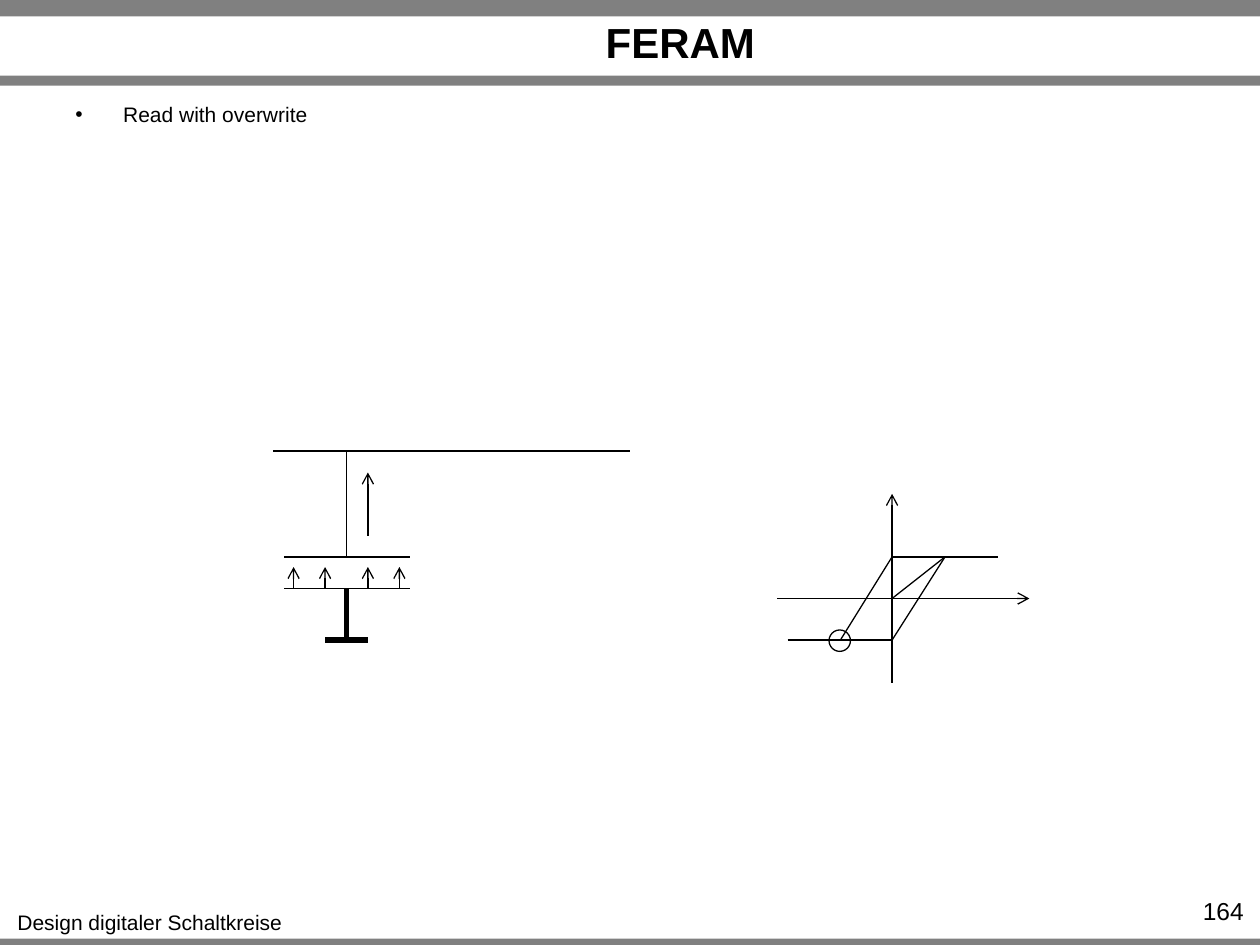
import itertools
from dataclasses import dataclass

import pptx
import pptx.dml.color
import pptx.enum.shapes
import pptx.enum.text
import pptx.oxml
import pptx.oxml.ns
import pptx.util
from pptx.util import Inches

ALIGN = pptx.enum.text.PP_ALIGN
ANCHOR = pptx.enum.text.MSO_ANCHOR
SHAPE = pptx.enum.shapes.MSO_SHAPE


@dataclass(frozen=True)
class Theme:
    font: str = "Arial"
    ink: str = "000000"
    bar: str = "808080"
    title_size: int = 24
    body_size: int = 12
    number_size: int = 14
    thin: float = 0.75
    thick: float = 3


THEME = Theme()


def color(value):
    return pptx.dml.color.RGBColor.from_string(value)


def add_drawing_element(parent, tag, **attributes):
    element = pptx.oxml.parse_xml(f"<a:{tag} {pptx.oxml.ns.nsdecls('a')}/>")
    for name, value in attributes.items():
        element.set(name, value)
    parent.append(element)


def add_bar(slide, top, height):
    bar = slide.shapes.add_shape(
        SHAPE.RECTANGLE, 0, Inches(top), Inches(10), Inches(height))
    bar.shadow.inherit = False
    bar.fill.solid()
    bar.fill.fore_color.rgb = color(THEME.bar)
    bar.line.fill.background()


def add_text(slide, text, box, size, align=ALIGN.LEFT, anchor=ANCHOR.TOP,
             bold=False, wrap=True, bullet=False):
    label = slide.shapes.add_textbox(*map(Inches, box))
    frame = label.text_frame
    frame.word_wrap = wrap
    frame.vertical_anchor = anchor
    frame.text = text
    paragraph = frame.paragraphs[0]
    paragraph.alignment = align
    if bullet:
        properties = paragraph._p.get_or_add_pPr()
        indent = Inches(0.38)
        properties.set("marL", str(indent))
        properties.set("indent", str(-indent))
        add_drawing_element(properties, "buFont", typeface=THEME.font)
        add_drawing_element(properties, "buChar", char="•")
    for run in paragraph.runs:
        run.font.name = THEME.font
        run.font.size = pptx.util.Pt(size)
        run.font.bold = bold
        run.font.color.rgb = color(THEME.ink)


def add_line(slide, start, end, width=THEME.thin, arrow=False):
    line = slide.shapes.add_connector(
        pptx.enum.shapes.MSO_CONNECTOR.STRAIGHT, *map(Inches, (*start, *end)))
    line.line.color.rgb = color(THEME.ink)
    line.line.width = pptx.util.Pt(width)
    if arrow:
        add_drawing_element(line.line._get_or_add_ln(), "tailEnd", type="arrow")
    add_drawing_element(line._element.spPr, "effectLst")


def add_capacitor(slide):
    center, upper, lower, ground, bit_line = 2.75, 4.42, 4.67, 5.08, 3.58

    # Two plates, each drawn as a left and a right half
    for plate, side in itertools.product((upper, lower), (-0.5, 0.5)):
        add_line(slide, (center, plate), (center + side, plate))

    # Ground connection
    add_line(slide, (center, lower), (center, ground), THEME.thick)
    add_line(slide, (2.58, ground), (2.92, ground), THEME.thick)

    # Polarisation between the plates
    for x in (2.33, 2.58, 2.92, 3.17):
        add_line(slide, (x, lower), (x, 4.5), arrow=True)

    # Bit line, its stem and the charge flowing to it
    add_line(slide, (2.17, bit_line), (5, bit_line))
    for low, high in itertools.pairwise((upper, 4, 3.75, bit_line)):
        add_line(slide, (center, low), (center, high))
    add_line(slide, (2.92, 4.25), (2.92, 3.75), arrow=True)


def add_hysteresis(slide):
    origin_x, origin_y, top, bottom = 7.08, 4.75, 4.42, 5.08
    left, right = 6.67, 7.5

    # Axes
    add_line(slide, (6.17, origin_y), (8.17, origin_y), arrow=True)
    add_line(slide, (origin_x, 5.42), (origin_x, 3.92), arrow=True)

    # Loop, saturation levels and initial curve
    add_line(slide, (origin_x, bottom), (right, top))
    add_line(slide, (left, bottom), (origin_x, top))
    add_line(slide, (origin_x, top), (7.92, top))
    add_line(slide, (6.25, bottom), (origin_x, bottom))
    add_line(slide, (origin_x, origin_y), (right, top))

    # Operating point
    point = slide.shapes.add_shape(
        SHAPE.OVAL, *map(Inches, (6.58, 5, 0.17, 0.17)))
    point.shadow.inherit = False
    point.fill.background()
    point.line.color.rgb = color(THEME.ink)
    point.line.width = pptx.util.Pt(THEME.thin)


def main():
    deck = pptx.Presentation()
    deck.slide_width, deck.slide_height = Inches(10), Inches(7.5)
    slide = deck.slides.add_slide(deck.slide_layouts[6])

    # Frame
    for top, height in ((7.45, 0.08), (0, 0.13), (0.6, 0.08)):
        add_bar(slide, top, height)
    add_text(slide, "Design digitaler Schaltkreise", (0.03, 7.17, 2.32, 0.3),
             THEME.body_size, ALIGN.CENTER, wrap=False)

    # Title, body and slide number
    add_text(slide, "FERAM", (1.3, 0.14, 8.2, 0.38), THEME.title_size,
             ALIGN.CENTER, ANCHOR.MIDDLE, bold=True)
    add_text(slide, "Read with overwrite", (0.5, 0.76, 9, 0.66),
             THEME.body_size, bullet=True)
    add_text(slide, "164", (9.1, 7.06, 0.87, 0.24), THEME.number_size,
             ALIGN.RIGHT)

    # Diagrams
    add_capacitor(slide)
    add_hysteresis(slide)
    deck.save("out.pptx")


if __name__ == "__main__":
    main()
